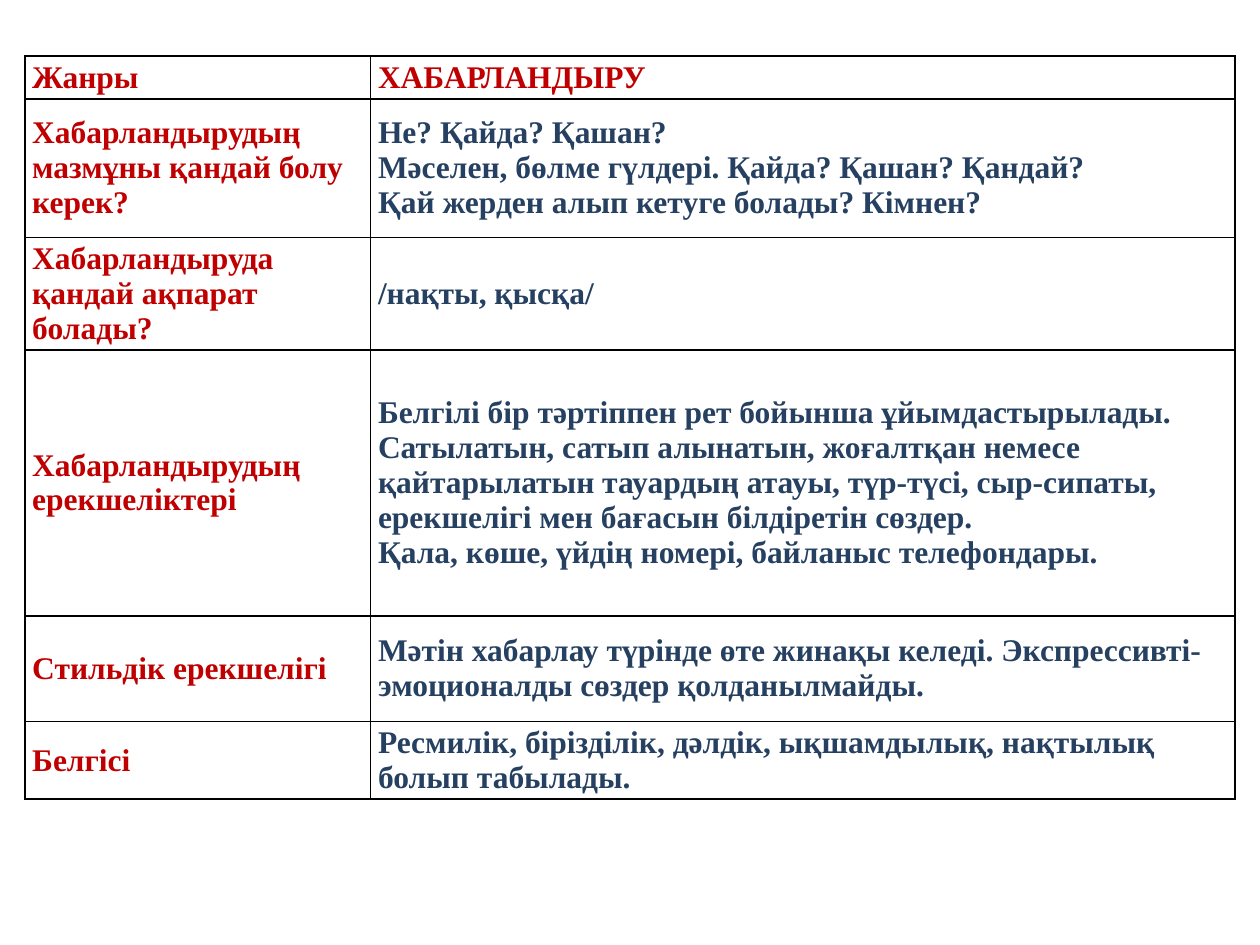
"""Build a slide with a table that describes the announcement genre."""
from lxml import etree
from pptx import Presentation
from pptx.dml.color import RGBColor
from pptx.enum.text import MSO_ANCHOR
from pptx.oxml.ns import qn
from pptx.util import Cm, Pt

MIDDLE = MSO_ANCHOR.MIDDLE
HUES = {"red": "C00000", "navy": "254061", "line": "000000"}
FONT = "Times New Roman"
ROWS = [
    (0.86, "Жанры", ["ХАБАРЛАНДЫРУ"]),
    (2.79, "Хабарландырудың мазмұны қандай болу керек?", [
        "Не? Қайда? Қашан?",
        "Мәселен, бөлме гүлдері. Қайда? Қашан? Қандай?",
        "Қай жерден алып кетуге болады? Кімнен?",
    ]),
    (2.13, "Хабарландыруда қандай ақпарат болады?", ["/нақты, қысқа/"]),
    (5.36, "Хабарландырудың ерекшеліктері", [
        "Белгілі бір тәртіппен рет бойынша ұйымдастырылады.",
        "Сатылатын, сатып алынатын, жоғалтқан немесе қайтарылатын тауардың "
        "атауы, түр-түсі, сыр-сипаты, ерекшелігі мен бағасын білдіретін сөздер.",
        "Қала, көше, үйдің номері, байланыс телефондары.",
    ]),
    (2.13, "Стильдік ерекшелігі", [
        "Мәтін хабарлау түрінде өте жинақы келеді. "
        "Экспрессивті-эмоционалды сөздер қолданылмайды.",
    ]),
    (1.5, "Белгісі", [
        "Ресмилік, бірізділік, дәлдік, ықшамдылық, нақтылық болып табылады.",
    ]),
]
WIDTHS = (6.97, 17.43)
LEFT, TOP = 0.5, 1.13


def write(cell, lines, hue="navy", size=18, bold=True):
    frame = cell.text_frame
    frame.text = "\n".join(lines)
    for para in frame.paragraphs:
        for run in para.runs:
            font = run.font
            font.name, font.size, font.bold = FONT, Pt(size), bold
            font.color.rgb = RGBColor.from_string(HUES[hue])


def style(cell):
    cell.vertical_anchor = MIDDLE
    cell.margin_left = cell.margin_right = Cm(0.15)
    cell.margin_top = cell.margin_bottom = Cm(0.08)
    props = cell._tc.get_or_add_tcPr()
    for side in "LRTB":
        edge = etree.SubElement(props, qn(f"a:ln{side}"), w=str(Pt(1)))
        fill = etree.SubElement(edge, qn("a:solidFill"))
        etree.SubElement(fill, qn("a:srgbClr"), val=HUES["line"])
    cell.fill.background()


def main():
    deck = Presentation()
    deck.slide_width, deck.slide_height = Cm(25.4), Cm(19.05)
    slide = deck.slides.add_slide(deck.slide_layouts[6])
    high = sum(row[0] for row in ROWS)
    table = slide.shapes.add_table(
        len(ROWS), len(WIDTHS), Cm(LEFT), Cm(TOP), Cm(sum(WIDTHS)), Cm(high)
    ).table
    table.horz_banding = False
    for col, width in zip(table.columns, WIDTHS):
        col.width = Cm(width)
    for num, (height, label, lines) in enumerate(ROWS):
        table.rows[num].height = Cm(height)
        write(table.cell(num, 0), [label], hue="red")
        write(table.cell(num, 1), lines, hue="navy" if num else "red")
    for cell in table.iter_cells():
        style(cell)
    deck.save("out.pptx")


if __name__ == "__main__":
    main()
